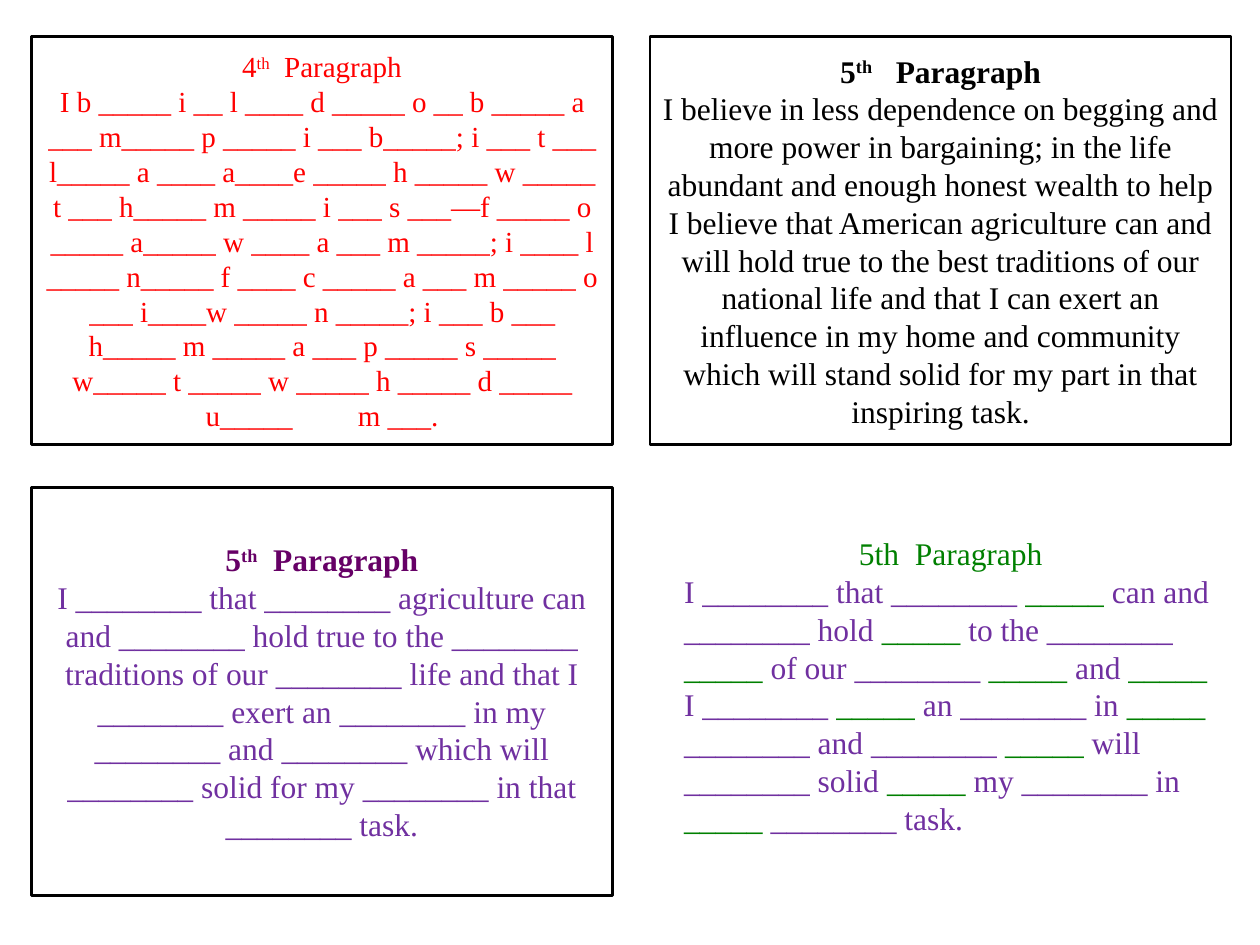
import pptx
import pptx.dml.color
import pptx.enum.shapes
import pptx.enum.text
import pptx.util

Pt = pptx.util.Pt
CENTER = pptx.enum.text.PP_ALIGN.CENTER
LEFT = pptx.enum.text.PP_ALIGN.LEFT

FONT = "Times New Roman"
BLACK, RED, PLUM = "000000", "FF0000", "660066"
PURPLE, GREEN = "7030A0", "008000"

CARD_LEFTS = (18, 371.5)
CARD_TOPS = (20.9, 278.6)
CARD_WIDTH, CARD_HEIGHT = 332, 233.3

FOURTH_INITIALS = (
    "I b _____ i __ l ____ d _____ o __ b _____ a ___ m_____ p _____ i ___ "
    "b_____; i ___ t ___ l_____ a ____ a____e _____ h _____ w _____ t ___ "
    "h_____ m _____ i ___ s ___—f _____ o _____ a_____ w ____ a ___ m _____; "
    "i ____ l _____ n_____ f ____ c _____ a ___ m _____ o ___ i____w _____ "
    "n _____; i ___ b ___ h_____ m _____ a ___ p _____ s _____ w_____ t _____ "
    "w _____ h _____ d _____ u_____         m ___."
)
FIFTH_FULL = (
    "I believe in less dependence on begging and more power in bargaining; in "
    "the life abundant and enough honest wealth to help I believe that American "
    "agriculture can and will hold true to the best traditions of our national "
    "life and that I can exert an influence in my home and community which will "
    "stand solid for my part in that inspiring task."
)
FIFTH_BLANKS = (
    "I ________ that ________ agriculture can and ________ hold true to the "
    "________ traditions of our ________ life and that I ________ exert an "
    "________ in my ________ and ________ which will ________ solid for my "
    "________ in that ________ task."
)
# Bars separate purple text from the green blanks that alternate with it.
FIFTH_MORE_BLANKS = (
    "I ________ that ________ |_____ |can and ________ hold |_____| to the "
    "________ |_____| of our ________ |_____| and |_____| I ________ |_____| an "
    "________ in |_____| ________ and ________ |_____| will ________ solid "
    "|_____| my ________ in |_____| ________ task."
)


def color(hex_string):
    return pptx.dml.color.RGBColor.from_string(hex_string)


def add_run(paragraph, text, hex_string, size=18, bold=False, superscript=False):
    run = paragraph.add_run()
    run.text = text
    run.font.name = FONT
    run.font.size = Pt(size)
    run.font.bold = bold
    run.font.color.rgb = color(hex_string)
    if superscript:
        run._r.get_or_add_rPr().set("baseline", "30000")


def add_heading(paragraph, number, title, hex_string, **style):
    """Add an ordinal heading; the title carries its leading gap."""
    paragraph.alignment = CENTER
    add_run(paragraph, number, hex_string, **style)
    add_run(paragraph, "th", hex_string, superscript=True, **style)
    add_run(paragraph, title, hex_string, **style)


def add_card(slide, column, row):
    """Add an outlined card and return its text frame."""
    card = slide.shapes.add_shape(
        pptx.enum.shapes.MSO_SHAPE.RECTANGLE,
        Pt(CARD_LEFTS[column]), Pt(CARD_TOPS[row]), Pt(CARD_WIDTH), Pt(CARD_HEIGHT))
    card.shadow.inherit = False
    card.fill.background()
    card.line.color.rgb = color(BLACK)
    card.line.width = Pt(1.5)
    frame = card.text_frame
    frame.word_wrap = True
    frame.vertical_anchor = pptx.enum.text.MSO_ANCHOR.MIDDLE
    return frame


def add_fourth_card(slide):
    frame = add_card(slide, 0, 0)
    add_heading(frame.paragraphs[0], "4", "  Paragraph", RED, size=16.6)
    body = frame.add_paragraph()
    body.alignment = CENTER
    add_run(body, FOURTH_INITIALS, RED, size=16.6)


def add_fifth_card(slide, column, row, title, heading_color, body, body_color):
    paragraph = add_card(slide, column, row).paragraphs[0]
    add_heading(paragraph, "5", title, heading_color, bold=True)
    paragraph.add_line_break()
    add_run(paragraph, body, body_color)


def add_open_text(slide):
    box = slide.shapes.add_textbox(Pt(383.8), Pt(301.7), Pt(319), Pt(181.4))
    frame = box.text_frame
    frame.word_wrap = True
    frame.auto_size = pptx.enum.text.MSO_AUTO_SIZE.SHAPE_TO_FIT_TEXT
    heading = frame.paragraphs[0]
    heading.alignment = CENTER
    add_run(heading, "5th  Paragraph", GREEN)
    body = frame.add_paragraph()
    body.alignment = LEFT
    for index, piece in enumerate(FIFTH_MORE_BLANKS.split("|")):
        add_run(body, piece, GREEN if index % 2 else PURPLE)


def main():
    presentation = pptx.Presentation()
    presentation.slide_width = Pt(720)
    presentation.slide_height = Pt(540)
    slide = presentation.slides.add_slide(presentation.slide_layouts[6])
    add_fourth_card(slide)
    add_fifth_card(slide, 1, 0, "   Paragraph", BLACK, FIFTH_FULL, BLACK)
    add_fifth_card(slide, 0, 1, "  Paragraph", PLUM, FIFTH_BLANKS, PURPLE)
    add_open_text(slide)
    presentation.save("out.pptx")


if __name__ == "__main__":
    main()
